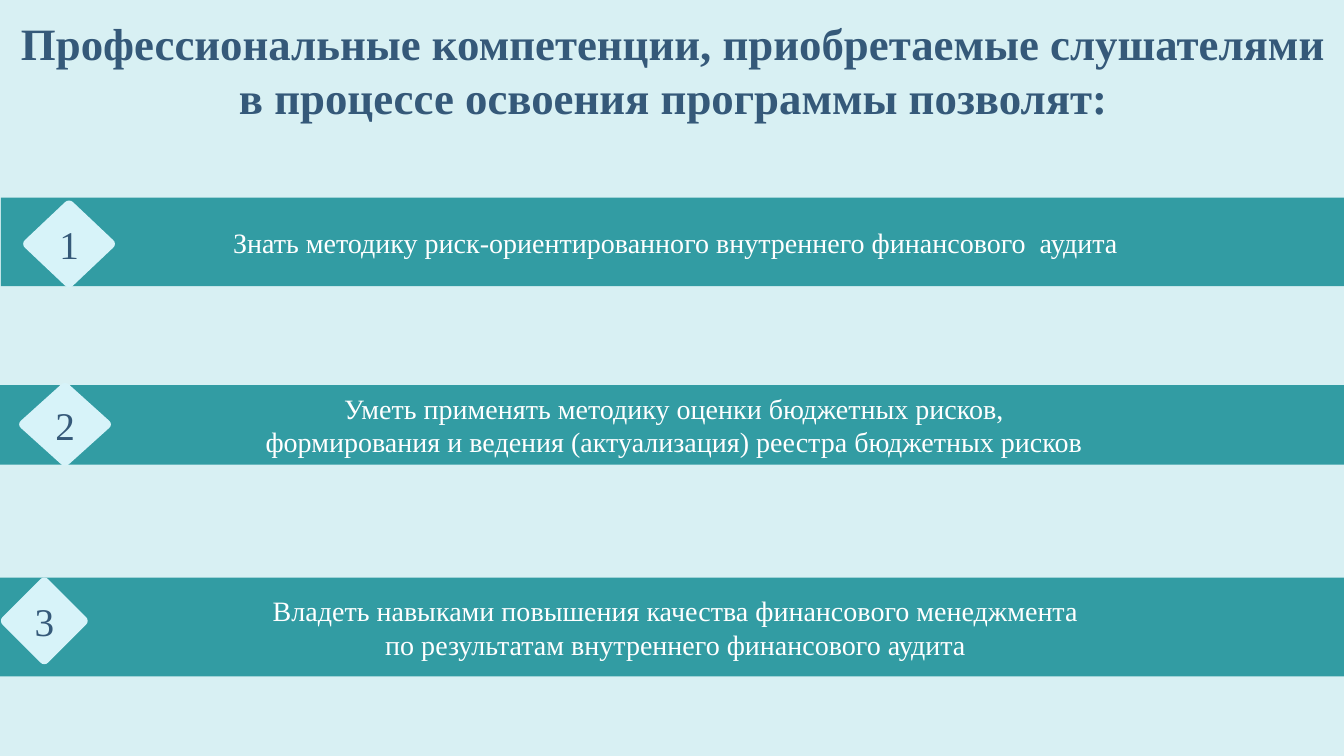
"""Build a slide listing the three competencies gained in an audit training programme."""
from pptx import Presentation
from pptx.dml.color import RGBColor
from pptx.enum.shapes import MSO_SHAPE as Shape
from pptx.enum.text import MSO_ANCHOR as Anchor, MSO_AUTO_SIZE as AutoSize, PP_ALIGN as Align
from pptx.util import Inches, Pt

THEME = {
    "background": RGBColor(0xD8, 0xF0, 0xF3),
    "band": RGBColor(0x32, 0x9C, 0xA3),
    "diamond": RGBColor(0xD7, 0xF3, 0xF9),
    "title": {"size": Pt(32), "bold": True, "color": RGBColor(0x35, 0x59, 0x79)},
    "number": {"size": Pt(28), "color": RGBColor(0x35, 0x59, 0x79)},
    "skill": {"size": Pt(20), "color": RGBColor(0xFF, 0xFF, 0xFF)},
    "font": "Times New Roman",
}
HEADING = "Профессиональные компетенции, приобретаемые слушателями\vв процессе освоения программы позволят:"
COMPETENCIES = [
    (["Знать методику риск-ориентированного внутреннего финансового  аудита"],
     (0.01, 1.96, 13.38, 0.88), (0.23, 1.99, 0.91, 0.86)),
    (["Уметь применять методику оценки бюджетных рисков,",
      "формирования и ведения (актуализация) реестра бюджетных рисков"],
     (-0.02, 3.82, 13.41, 0.79), (0.19, 3.8, 0.91, 0.82)),
    (["Владеть навыками повышения качества финансового менеджмента",
      "по результатам внутреннего финансового аудита"],
     (0, 5.73, 13.4, 0.98), (0.01, 5.73, 0.86, 0.86)),
]
DIAMOND_QUARTER = [(0, -0.5), (0.025, -0.495), (0.045, -0.48), (0.48, -0.045), (0.495, -0.025)]


def write(holder, lines, style, anchor=Anchor.MIDDLE):
    frame = holder.text_frame
    frame.text = "\n".join(lines)
    for key, value in {"word_wrap": True, "auto_size": AutoSize.NONE, "vertical_anchor": anchor}.items():
        setattr(frame, key, value)
    for line in frame.paragraphs:
        line.alignment = Align.CENTER
        line.font.color.rgb = style["color"]
        for key, value in {**style, "name": THEME["font"]}.items():
            if key != "color":
                setattr(line.font, key, value)


def paint(part, color):
    part.shadow.inherit = False
    part.fill.solid()
    part.fill.fore_color.rgb = color
    part.line.fill.background()


deck = Presentation()
deck.slide_width, deck.slide_height = Inches(13.33), Inches(7.5)
slide = deck.slides.add_slide(deck.slide_layouts[5])
slide.background.fill.solid()
slide.background.fill.fore_color.rgb = THEME["background"]

heading = slide.shapes.title
for side, length in {"left": 0.01, "top": 0.11, "width": 13.34, "height": 1.18}.items():
    setattr(heading, side, Inches(length))
write(heading, [HEADING], THEME["title"], Anchor.TOP)

outline = list(DIAMOND_QUARTER)
for turn in range(3):
    outline += [(-y, x) for x, y in outline[-len(DIAMOND_QUARTER):]]

for number, (skill, band_box, diamond_box) in enumerate(COMPETENCIES, start=1):
    band = slide.shapes.add_shape(Shape.RECTANGLE, *map(Inches, band_box))
    paint(band, THEME["band"])
    write(band, skill, THEME["skill"])

    left, top, width, height = diamond_box
    corners = [(Inches(left + width * (0.5 + x)), Inches(top + height * (0.5 + y))) for x, y in outline]
    builder = slide.shapes.build_freeform(*corners[0])
    builder.add_line_segments(corners[1:], close=True)
    diamond = builder.convert_to_shape()
    paint(diamond, THEME["diamond"])
    write(diamond, [str(number)], THEME["number"])

deck.save("out.pptx")
